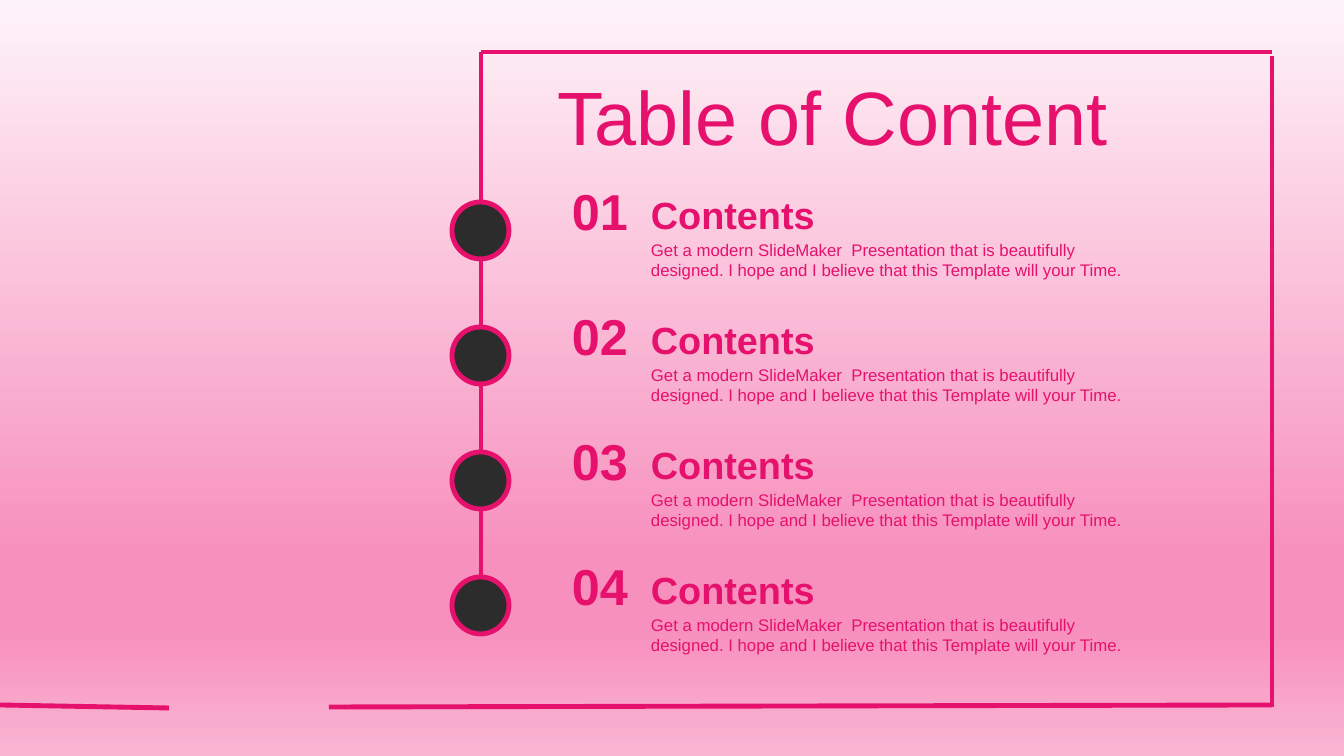
"""Build a table of contents slide with a framed timeline of four entries."""
from copy import deepcopy

from lxml.etree import SubElement
from pptx import Presentation
from pptx.dml.color import RGBColor
from pptx.enum.shapes import MSO_CONNECTOR as Connector, MSO_SHAPE as Shape
from pptx.enum.text import MSO_ANCHOR as Anchor, MSO_AUTO_SIZE as AutoSize, PP_ALIGN as Align
from pptx.oxml.ns import qn
from pptx.util import Emu, Pt

COLORS = {
    "pink": "E6106D",
    "dot": "2C2C2C",
    "sky": "FEF3F8",
    "rose": "F790BD",
    "floor": "FAB5D3",
}
FONT = "Arial"
LINE_WIDTH = Pt(3.5)
DESCRIPTION = (
    "Get a modern SlideMaker  Presentation that is beautifully designed. "
    "I hope and I believe that this Template will your Time."
)


def px(length):
    return Emu(round(length * 914400 / 100.8))


def write(shape, text, size, bold=False, align=Align.LEFT, inset=(10, 5)):
    frame = shape.text_frame
    frame.word_wrap = True
    frame.auto_size = AutoSize.SHAPE_TO_FIT_TEXT
    frame.margin_left = frame.margin_right = px(inset[0])
    frame.margin_top = frame.margin_bottom = px(inset[1])
    frame.text = text
    paragraph = frame.paragraphs[0]
    paragraph.alignment = align
    paragraph.font.name = FONT
    paragraph.font.size = Pt(size)
    paragraph.font.bold = bold
    paragraph.font.color.rgb = pink


pink = RGBColor.from_string(COLORS["pink"])
presentation = Presentation()
presentation.slide_width = px(1344)
presentation.slide_height = px(756)
slide = presentation.slides.add_slide(presentation.slide_layouts[5])

background = slide.background.fill
background.gradient()
background.gradient_angle = 270
stop_list = slide.element.find(".//" + qn("a:gsLst"))
for extra_stop in [deepcopy(stop) for stop in stop_list]:
    stop_list.append(extra_stop)
gradient = [(0, "sky"), (0.74, "rose"), (0.83, "rose"), (1, "floor")]
for stop, (position, color) in zip(background.gradient_stops, gradient):
    stop.position = position
    stop.color.rgb = RGBColor.from_string(COLORS[color])

title = slide.shapes.title
title.left, title.top, title.width, title.height = px(547), px(64), px(684), px(102)
write(title, "Table of Content", 54)
title.text_frame.vertical_anchor = Anchor.MIDDLE

frame_lines = [
    (481, 590, 481, 52),
    (1272, 52, 481, 52),
    (1272, 707, 1272, 56),
    (1272, 705, 329, 707),
    (169, 708, 0, 705),
]
frame_group = slide.shapes.add_group_shape()
for ends in frame_lines:
    connector = frame_group.shapes.add_connector(Connector.STRAIGHT, *map(px, ends))
    connector.line.color.rgb = pink
    connector.line.width = LINE_WIDTH
    SubElement(connector.element.spPr, qn("a:effectLst"))

for index in range(4):
    offset = index * 125

    dot = slide.shapes.add_shape(Shape.OVAL, px(452), px(202 + offset), px(57), px(57))
    dot.shadow.inherit = False
    dot.fill.solid()
    dot.fill.fore_color.rgb = RGBColor.from_string(COLORS["dot"])
    dot.line.color.rgb = pink
    dot.line.width = LINE_WIDTH

    entry = slide.shapes.add_group_shape().shapes
    description = entry.add_textbox(px(641), px(235 + offset), px(497), px(50))
    write(description, DESCRIPTION, 12)
    heading = entry.add_textbox(px(639), px(187 + offset), px(497), px(56))
    write(heading, "Contents", 27, bold=True, inset=(12, 5))
    number = entry.add_textbox(px(547), px(175 + offset), px(106), px(72))
    write(number, f"{index + 1:02}", 36, bold=True, align=Align.CENTER, inset=(12, 5))

presentation.save("out.pptx")
